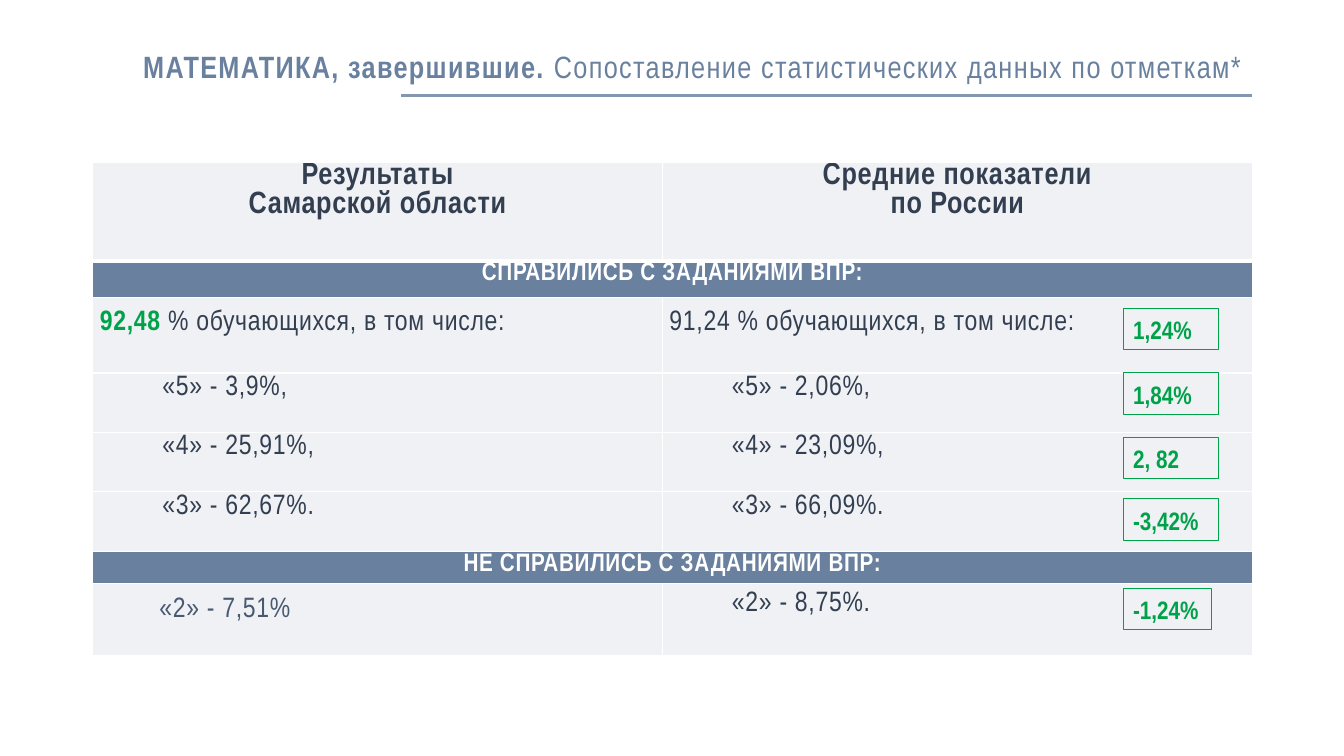
from lxml import etree
from pptx import Presentation
from pptx import util as u
from pptx.dml.color import RGBColor
from pptx.enum import shapes, text
from pptx.oxml import ns

FONT = "Arial Narrow"
STEEL = RGBColor(0x69, 0x80, 0x9F)
RULE = RGBColor(0x84, 0x97, 0xB0)
PALE = RGBColor(0xEF, 0xF1, 0xF5)
WHITE = RGBColor(0xFF, 0xFF, 0xFF)
INK = RGBColor(0x33, 0x3F, 0x50)
SLATE = RGBColor(0x48, 0x59, 0x70)
GREEN = RGBColor(0x00, 0xA2, 0x49)

LEFT, CENTER, RIGHT, JUSTIFY = (
    text.PP_ALIGN.LEFT, text.PP_ALIGN.CENTER, text.PP_ALIGN.RIGHT, text.PP_ALIGN.JUSTIFY)

COLUMN_WIDTHS = (5.65, 5.85)
ROW_HEIGHTS = (0.98, 0.36, 0.75, 0.59, 0.59, 0.59, 0.25, 0.71)
HEADERS = (("Результаты", "Самарской области"), ("Средние показатели", "по России"))
BANDS = {1: "СПРАВИЛИСЬ С ЗАДАНИЯМИ ВПР:", 6: "НЕ СПРАВИЛИСЬ С ЗАДАНИЯМИ ВПР:"}
MARKS = {
    3: ("«5» - 3,9%,", "«5» - 2,06%,"),
    4: ("«4» - 25,91%,", "«4» - 23,09%,"),
    5: ("«3» - 62,67%.", "«3» - 66,09%."),
}
# Difference, top, width
BADGES = (
    ("1,24%", 3.06, 0.95),
    ("1,84%", 3.7, 0.95),
    ("2, 82", 4.34, 0.95),
    ("-3,42%", 4.95, 0.95),
    ("-1,24%", 5.84, 0.88),
)


def add_span(para, words, size=20, color=INK, bold=False, spacing=0.5):
    span = para.add_run()
    span.text = words
    span.font.name = FONT
    span.font.size = u.Pt(size)
    span.font.bold = bold
    span.font.color.rgb = color
    if spacing:
        span._r.get_or_add_rPr().set("spc", str(int(spacing * 100)))


def format_para(para, align=JUSTIFY, line_spacing=1.07, indent=0):
    para.alignment = align
    para.line_spacing = line_spacing
    if indent:
        properties = para._p.get_or_add_pPr()
        properties.set("marL", "0")
        properties.set("indent", str(u.Inches(indent)))


def add_title(page):
    box = page.shapes.add_textbox(u.Inches(0.95), u.Inches(0.4), u.Inches(11.47), u.Inches(0.55))
    frame = box.text_frame
    frame.word_wrap = True
    frame.vertical_anchor = text.MSO_ANCHOR.MIDDLE
    para = frame.paragraphs[0]
    format_para(para, RIGHT, 0.9)
    add_span(para, "МАТЕМАТИКА, завершившие. ", 22, STEEL, True, 1)
    add_span(para, "Сопоставление статистических данных по отметкам*", 22, STEEL, False, 1)


def add_rule(page):
    rule = page.shapes.add_connector(
        shapes.MSO_CONNECTOR.STRAIGHT, u.Inches(3.98), u.Inches(0.95), u.Inches(12.42), u.Inches(0.95))
    rule.line.color.rgb = RULE
    rule.line.width = u.Pt(2.25)
    etree.SubElement(rule._element.spPr, ns.qn("a:effectLst"))


def set_borders(cell, bottom=1):
    properties = cell._tc.get_or_add_tcPr()
    for place, (side, width) in enumerate((("L", 1), ("R", 1), ("T", 1), ("B", bottom))):
        border = etree.Element(ns.qn("a:ln" + side), w=str(u.Pt(width)))
        fill = etree.SubElement(border, ns.qn("a:solidFill"))
        etree.SubElement(fill, ns.qn("a:srgbClr"), val=str(WHITE))
        properties.insert(place, border)


def style_cell(cell, row):
    cell.margin_left = cell.margin_right = u.Inches(0.07)
    cell.margin_top = cell.margin_bottom = 0
    cell.fill.solid()
    cell.fill.fore_color.rgb = STEEL if row in BANDS else PALE
    set_borders(cell, bottom=3 if row == 0 else 1)


def fill_cell(cell, *spans, top=0, **layout):
    """Write one paragraph; each span is a (words, format) pair."""
    cell.margin_top = u.Inches(top)
    para = cell.text_frame.paragraphs[0]
    format_para(para, **layout)
    for words, style in spans:
        add_span(para, words, **style)


def add_results(page):
    frame = page.shapes.add_table(
        len(ROW_HEIGHTS), len(COLUMN_WIDTHS), u.Inches(0.92), u.Inches(1.61),
        u.Inches(sum(COLUMN_WIDTHS)), u.Inches(sum(ROW_HEIGHTS)))
    table = frame.table
    table.first_row = table.horz_banding = False
    for column, width in zip(table.columns, COLUMN_WIDTHS):
        column.width = u.Inches(width)
    for index, height in enumerate(ROW_HEIGHTS):
        table.rows[index].height = u.Inches(height)
        for cell in table.rows[index].cells:
            style_cell(cell, index)

    # Column headers
    for column, lines in enumerate(HEADERS):
        body = table.cell(0, column).text_frame
        for index, words in enumerate(lines):
            para = body.add_paragraph() if index else body.paragraphs[0]
            format_para(para, CENTER, 1.0)
            add_span(para, words, 22, bold=True)

    # Section bands across both columns
    for row, words in BANDS.items():
        table.cell(row, 0).merge(table.cell(row, 1))
        fill_cell(table.cell(row, 0), (words, dict(size=18, color=WHITE, bold=True)), align=CENTER)

    # Totals
    fill_cell(table.cell(2, 0), ("92,48 ", dict(color=GREEN, bold=True)),
              ("% обучающихся, в том числе:", {}), top=0.11)
    fill_cell(table.cell(2, 1), ("91,24 % обучающихся, в том числе:", {}), top=0.11)

    # Shares by mark
    for row, shares in MARKS.items():
        for column, words in enumerate(shares):
            fill_cell(table.cell(row, column), (words, {}), indent=0.62)
    fill_cell(table.cell(7, 0), ("«2» - 7,51%", dict(color=SLATE)), top=0.11, indent=0.59)
    fill_cell(table.cell(7, 1), ("«2» - 8,75%.", {}), top=0.06, indent=0.62)


def add_badge(page, words, top, width):
    badge = page.shapes.add_shape(
        shapes.MSO_SHAPE.RECTANGLE, u.Inches(11.14), u.Inches(top), u.Inches(width), u.Inches(0.41))
    badge.shadow.inherit = False
    badge.fill.background()
    badge.line.color.rgb = GREEN
    badge.line.width = u.Pt(0.75)
    frame = badge.text_frame
    frame.word_wrap = True
    frame.vertical_anchor = text.MSO_ANCHOR.BOTTOM
    para = frame.paragraphs[0]
    format_para(para, LEFT, 1.0)
    add_span(para, words, 18, GREEN, True, 0)


def main():
    deck = Presentation()
    deck.slide_width, deck.slide_height = u.Inches(13.33), u.Inches(7.5)
    page = deck.slides.add_slide(deck.slide_layouts[6])
    add_title(page)
    add_rule(page)
    add_results(page)
    for words, top, width in BADGES:
        add_badge(page, words, top, width)
    deck.save("out.pptx")


if __name__ == "__main__":
    main()
